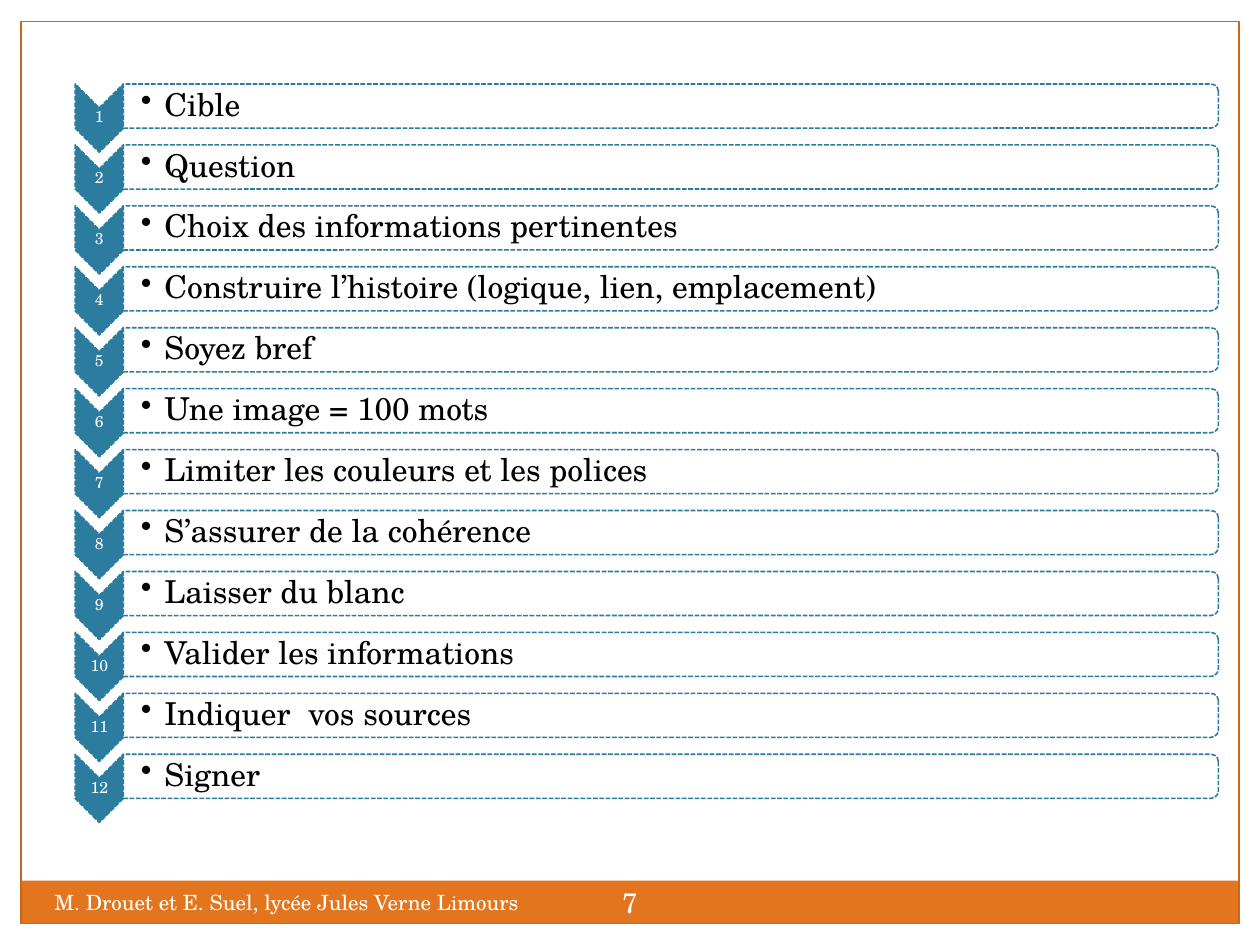
from dataclasses import dataclass

from lxml.etree import SubElement
from pptx import Presentation
from pptx.dml.color import RGBColor
from pptx.enum.dml import MSO_LINE
from pptx.enum.shapes import MSO_SHAPE
from pptx.enum.text import MSO_ANCHOR, PP_ALIGN
from pptx.oxml.ns import qn
from pptx.util import Pt


@dataclass(frozen=True)
class Theme:
    font: str = "TeX Gyre Schola"
    white: str = "FFFFFF"
    black: str = "000000"
    teal: str = "2C7C9F"
    orange: str = "E2751D"
    frame: str = "C7671A"
    step_size: float = 18
    number_size: float = 9
    footer_size: float = 12
    page_number_size: float = 16


@dataclass(frozen=True)
class Box:
    left: float
    top: float
    width: float
    height: float

    def inner(self, left, top, width, height):
        return Box(self.left + left, self.top + top, width, height)

    def turned(self):
        shift = (self.width - self.height) / 2
        return Box(self.left + shift, self.top - shift, self.height, self.width)

    def lengths(self):
        return Pt(self.left), Pt(self.top), Pt(self.width), Pt(self.height)


THEME = Theme()
STEPS = [
    "Cible",
    "Question",
    "Choix des informations pertinentes",
    "Construire l’histoire (logique, lien, emplacement)",
    "Soyez bref",
    "Une image = 100 mots",
    "Limiter les couleurs et les polices",
    "S’assurer de la cohérence",
    "Laisser du blanc",
    "Valider les informations",
    "Indiquer  vos sources",
    "Signer",
]


def add_panel(page, kind, box, fill=None, line=None, weight=0.75):
    panel = page.shapes.add_shape(kind, *box.lengths())
    panel.shadow.inherit = False
    if fill:
        panel.fill.solid()
        panel.fill.fore_color.rgb = RGBColor.from_string(fill)
    else:
        panel.fill.background()
    if line:
        panel.line.color.rgb = RGBColor.from_string(line)
        panel.line.width = Pt(weight)
    else:
        panel.line.fill.background()
    return panel


def add_turned_panel(page, kind, box, fill):
    panel = add_panel(page, kind, box.turned(), fill, THEME.teal, 0.9)
    panel.rotation = 90
    panel.line.dash_style = MSO_LINE.SQUARE_DOT
    return panel


def add_text(page, box, text, size, color, insets, anchor=MSO_ANCHOR.MIDDLE, align=PP_ALIGN.LEFT):
    frame = page.shapes.add_textbox(*box.lengths()).text_frame
    frame.word_wrap = True
    frame.vertical_anchor = anchor
    frame.margin_left, frame.margin_top, frame.margin_right, frame.margin_bottom = map(Pt, insets)
    para = frame.paragraphs[0]
    para.alignment = align
    span = para.add_run()
    span.text = text
    span.font.name = THEME.font
    span.font.size = Pt(size)
    span.font.color.rgb = RGBColor.from_string(color)
    return para


def set_opacity(panel, percent):
    color = panel.fill._xPr.find(qn("a:solidFill"))[0]
    SubElement(color, qn("a:alpha"), val=str(percent * 1000))


def set_bullet(para, indent):
    para.level = 1
    properties = para._p.get_or_add_pPr()
    properties.set("marL", str(Pt(indent)))
    properties.set("indent", str(-Pt(indent)))
    SubElement(properties, qn("a:buChar"), char="•")


def add_step(page, box, number, text):
    chevron_width = 27.5
    bar_width = box.width - chevron_width
    add_turned_panel(page, MSO_SHAPE.CHEVRON, box.inner(0, 0, chevron_width, 39), THEME.teal)
    label = add_text(page, box.inner(0, 13.5, chevron_width, 11.5), str(number),
                     THEME.number_size, THEME.white, (0.5,) * 4, align=PP_ALIGN.CENTER)
    label.line_spacing = 0.9
    bar = add_turned_panel(page, MSO_SHAPE.ROUND_2_SAME_RECTANGLE,
                           box.inner(chevron_width, 0, bar_width, box.height), THEME.white)
    set_opacity(bar, 90)
    item = add_text(page, box.inner(chevron_width, 1, bar_width - 1.5, 23), text,
                    THEME.step_size, THEME.black, (10, 0.8, 0.8, 0.8))
    item.line_spacing = 0.9
    set_bullet(item, 13.5)


def add_steps(page, box):
    bar_height, tail = 25.2, 13.8
    pitch = (box.height - bar_height - tail) / (len(STEPS) - 1)
    for index, text in enumerate(STEPS):
        add_step(page, box.inner(0, index * pitch, box.width, bar_height), index + 1, text)


def add_frame(page, box):
    add_panel(page, MSO_SHAPE.RECTANGLE, box.inner(0, box.height - 24.5, box.width, 24.5), THEME.orange)
    add_panel(page, MSO_SHAPE.RECTANGLE, box, line=THEME.frame)


def add_footer(page, box):
    add_text(page, box.inner(12, 1.5, 282, 29), "M. Drouet et E. Suel, lycée Jules Verne Limours",
             THEME.footer_size, THEME.white, (7.2, 3.6, 7.2, 3.6), MSO_ANCHOR.TOP)
    add_text(page, box.inner((box.width - 48) / 2, -5, 48, 34.5), "7",
             THEME.page_number_size, THEME.white, (3.6,) * 4, align=PP_ALIGN.CENTER)


def main():
    deck = Presentation()
    deck.slide_width, deck.slide_height = Pt(720), Pt(540)
    page = deck.slides.add_slide(deck.slide_layouts[6])
    add_frame(page, Box(12, 12.2, 696, 515.6))
    add_steps(page, Box(43, 48, 653.2, 422))
    add_footer(page, Box(12, 503.3, 696, 24.5))
    deck.save("out.pptx")


if __name__ == "__main__":
    main()
